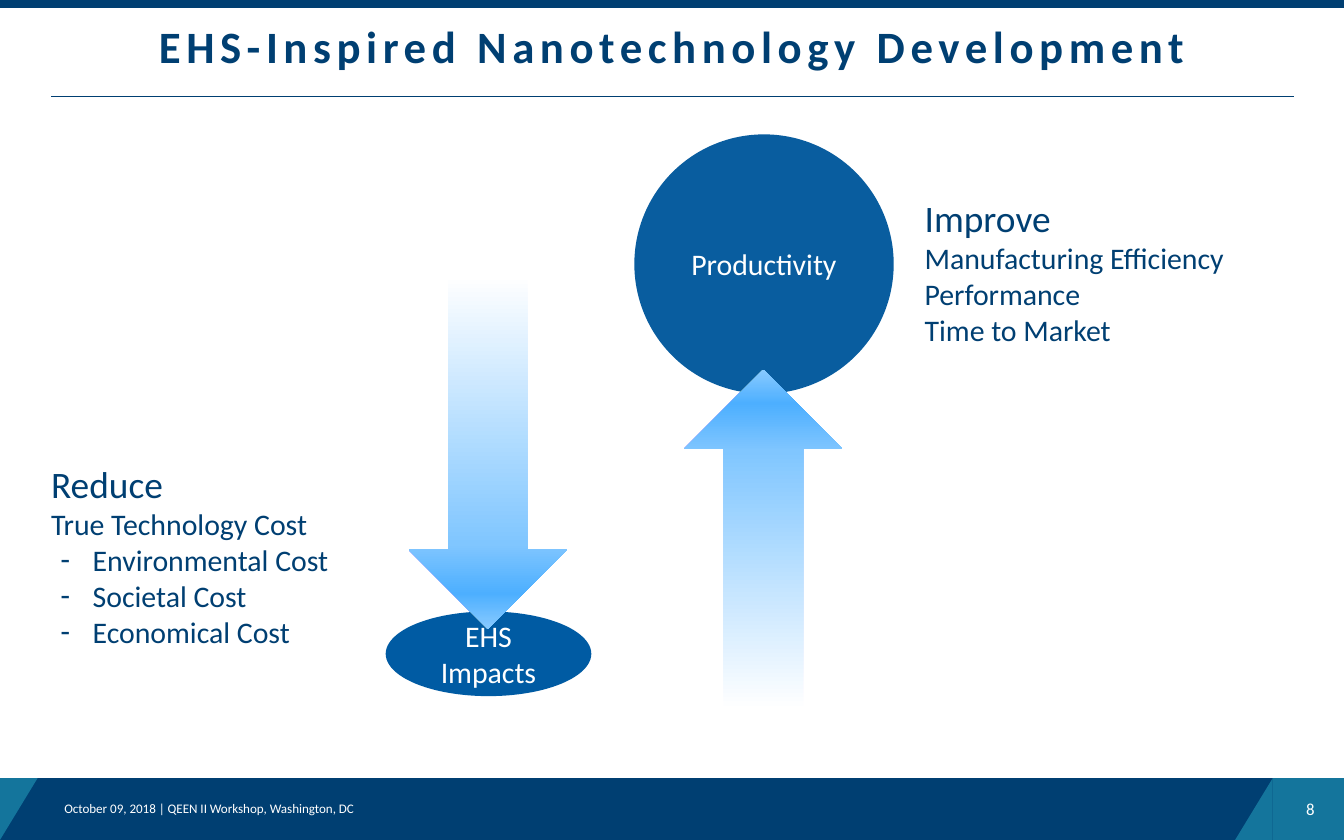
"""Builds the EHS-inspired nanotechnology development slide."""
from dataclasses import dataclass

from lxml import etree
from pptx import Presentation
from pptx.dml.color import RGBColor
from pptx.enum import shapes as kinds, text as styles
from pptx.oxml.ns import qn
from pptx.util import Inches, Pt

NAVY, TEAL, WHITE = "003F72", "14759C", "FFFFFF"
FADE = ((0, WHITE), (76, "80C6FF"), (90, "4DAFFF"), (100, "88CAFF"))
SHAPE = kinds.MSO_SHAPE
ALIGN = styles.PP_ALIGN
ANCHOR = styles.MSO_ANCHOR


@dataclass
class Box:
    left: float
    top: float
    width: float
    height: float

    def lengths(self) -> tuple:
        return tuple(Inches(v) for v in (self.left, self.top, self.width, self.height))


@dataclass
class Panel:
    """A block shape with an optional label."""
    kind: int
    box: Box
    color: str
    label: str = ""
    flip: str = ""


@dataclass
class Arrow:
    kind: int
    box: Box
    angle: int


@dataclass
class Goal:
    """A heading, its plain lines and its dashed items."""
    box: Box
    heading: str
    lines: list
    items: list


def rgb(color: str) -> RGBColor:
    return RGBColor.from_string(color)


def format_runs(paragraph, size: float, color: str, bold: bool = False) -> None:
    for run in paragraph.runs:
        run.font.name = "Calibri"
        run.font.size = Pt(size)
        run.font.bold = bold
        run.font.color.rgb = rgb(color)


def place(holder, box: Box) -> None:
    holder.left, holder.top, holder.width, holder.height = box.lengths()


def add_block(slide, kind: int, box: Box):
    block = slide.shapes.add_shape(kind, *box.lengths())
    block.shadow.inherit = False
    block.line.fill.background()
    return block


def draw_panel(slide, panel: Panel) -> None:
    block = add_block(slide, panel.kind, panel.box)
    block.fill.solid()
    block.fill.fore_color.rgb = rgb(panel.color)
    if panel.flip:
        block.element.spPr.find(qn("a:xfrm")).set(panel.flip, "1")
    if panel.label:
        block.text_frame.text = panel.label
        block.text_frame.vertical_anchor = ANCHOR.MIDDLE
        block.text_frame.paragraphs[0].alignment = ALIGN.CENTER
        format_runs(block.text_frame.paragraphs[0], 16, WHITE)


def draw_arrow(slide, arrow: Arrow) -> None:
    block = add_block(slide, arrow.kind, arrow.box)
    block.fill.gradient()
    block.fill.gradient_angle = arrow.angle
    stops = block.element.spPr.find(".//" + qn("a:gsLst"))
    for stop in list(stops):
        stops.remove(stop)
    for percent, color in FADE:
        stop = etree.SubElement(stops, qn("a:gs"), pos=str(percent * 1000))
        etree.SubElement(stop, qn("a:srgbClr"), val=color)


def draw_caption(slide, box: Box, caption: str, size: float, align, anchor) -> None:
    frame = slide.shapes.add_textbox(*box.lengths()).text_frame
    frame.word_wrap = True
    frame.vertical_anchor = anchor
    frame.text = caption
    frame.paragraphs[0].alignment = align
    format_runs(frame.paragraphs[0], size, WHITE)


def draw_rule(slide, left: float, right: float, y: float) -> None:
    rule = slide.shapes.add_connector(
        kinds.MSO_CONNECTOR.STRAIGHT, Inches(left), Inches(y), Inches(right), Inches(y))
    rule.line.color.rgb = rgb(NAVY)
    rule.line.width = Pt(0.5)
    etree.SubElement(rule.element.spPr, qn("a:effectLst"))


def write_title(holder, title: str) -> None:
    place(holder, Box(0.36, 0, 9.28, 0.73))
    frame = holder.text_frame
    frame.text = title
    frame.auto_size = styles.MSO_AUTO_SIZE.NONE
    frame.vertical_anchor = ANCHOR.MIDDLE
    heading = frame.paragraphs[0]
    heading.alignment = ALIGN.CENTER
    heading.line_spacing = 0.9
    format_runs(heading, 24, NAVY, bold=True)
    for run in heading.runs:
        run.font._element.set("spc", "300")


def write_goal(holder, goal: Goal) -> None:
    place(holder, goal.box)
    frame = holder.text_frame
    frame.text = "\n".join([goal.heading, *goal.lines, *goal.items])
    frame.auto_size = styles.MSO_AUTO_SIZE.NONE
    frame.vertical_anchor = ANCHOR.TOP
    first_item = 1 + len(goal.lines)
    for index, paragraph in enumerate(frame.paragraphs):
        paragraph.space_before = Pt(0)
        dashed = index >= first_item
        properties = paragraph._p.get_or_add_pPr()
        properties.set("marL", str(Inches(0.31 if dashed else 0)))
        properties.set("indent", str(Inches(-0.24 if dashed else 0)))
        if dashed:
            etree.SubElement(properties, qn("a:buChar"), char="-")
        else:
            etree.SubElement(properties, qn("a:buNone"))
        format_runs(paragraph, 16 if index else 20, NAVY)


BANDS = [
    Panel(SHAPE.RECTANGLE, Box(0, 5.79, 10, 0.46), NAVY),
    Panel(SHAPE.RIGHT_TRIANGLE, Box(0, 5.79, 0.28, 0.46), TEAL, flip="flipV"),
    Panel(SHAPE.RIGHT_TRIANGLE, Box(9.19, 5.79, 0.28, 0.46), TEAL, flip="flipH"),
    Panel(SHAPE.RECTANGLE, Box(9.47, 5.79, 0.53, 0.46), TEAL),
    Panel(SHAPE.RECTANGLE, Box(0, 0, 10, 0.06), NAVY),
]
OUTCOMES = [
    (Panel(SHAPE.OVAL, Box(2.87, 4.55, 1.53, 0.63), "005BA3", "EHS Impacts"),
     Arrow(SHAPE.DOWN_ARROW, Box(3.04, 2.05, 1.18, 2.63), 270)),
    (Panel(SHAPE.OVAL, Box(4.72, 1, 1.93, 1.93), "095D9F", "Productivity"),
     Arrow(SHAPE.UP_ARROW, Box(5.09, 2.75, 1.18, 2.53), 90)),
]
GOALS = [
    Goal(Box(6.78, 1.4, 2.76, 1.25), "Improve",
         ["Manufacturing Efficiency", "Performance", "Time to Market"], []),
    Goal(Box(0.28, 3.38, 2.77, 2.32), "Reduce", ["True Technology Cost"],
         ["Environmental Cost", "Societal Cost", "Economical Cost"]),
]


def main() -> None:
    deck = Presentation()
    deck.slide_width, deck.slide_height = Inches(10), Inches(6.25)
    slide = deck.slides.add_slide(deck.slide_layouts[3])
    title, *bodies = slide.placeholders
    write_title(title, "EHS-Inspired Nanotechnology Development")
    for holder, goal in zip(bodies, GOALS):
        write_goal(holder, goal)
    for band in BANDS:
        draw_panel(slide, band)
    draw_caption(slide, Box(0.38, 5.91, 8.69, 0.22),
                 "October 09, 2018 | QEEN II Workshop, Washington, DC", 7,
                 ALIGN.LEFT, ANCHOR.TOP)
    draw_caption(slide, Box(9.49, 5.78, 0.39, 0.47), "8", 9, ALIGN.RIGHT, ANCHOR.MIDDLE)
    draw_rule(slide, 0.38, 9.63, 0.72)
    for outcome, arrow in OUTCOMES:
        draw_panel(slide, outcome)
        draw_arrow(slide, arrow)
    deck.save("out.pptx")


if __name__ == "__main__":
    main()
